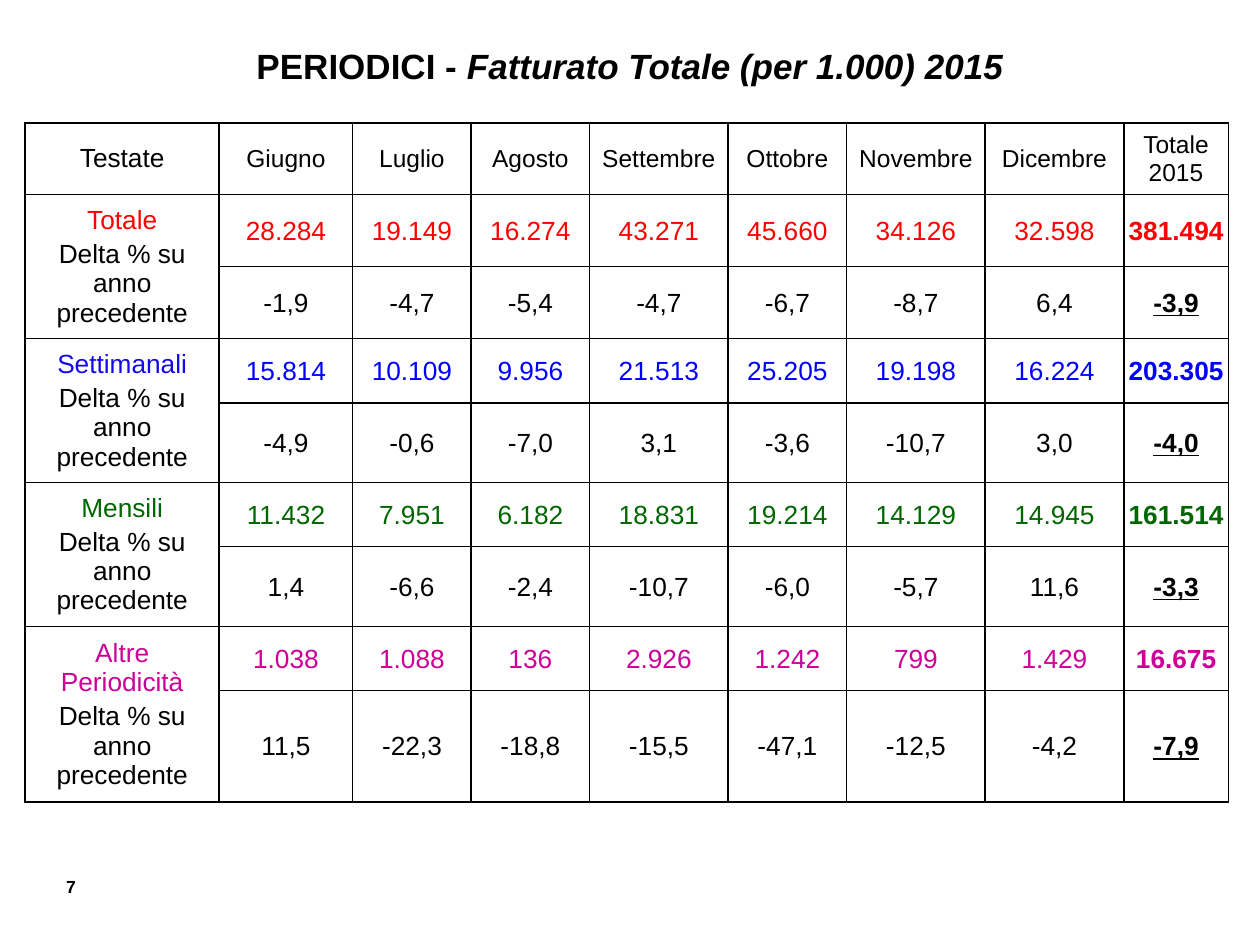
from lxml import etree
from pptx import Presentation, util as u
from pptx.dml.color import RGBColor
from pptx.enum import text
from pptx.oxml.ns import qn

BLACK = "000000"
MONTHS = ["Giugno", "Luglio", "Agosto", "Settembre", "Ottobre", "Novembre", "Dicembre"]
DELTA = "Delta % su anno precedente"
# label, label colour, figure colour, revenue, change on the previous year
GROUPS = [
    ("Totale", "FF0000", "FF0000",
     "28.284 19.149 16.274 43.271 45.660 34.126 32.598 381.494",
     "-1,9 -4,7 -5,4 -4,7 -6,7 -8,7 6,4 -3,9"),
    ("Settimanali", "1409ED", "0000FF",
     "15.814 10.109 9.956 21.513 25.205 19.198 16.224 203.305",
     "-4,9 -0,6 -7,0 3,1 -3,6 -10,7 3,0 -4,0"),
    ("Mensili", "006600", "006600",
     "11.432 7.951 6.182 18.831 19.214 14.129 14.945 161.514",
     "1,4 -6,6 -2,4 -10,7 -6,0 -5,7 11,6 -3,3"),
    ("Altre Periodicità", "CC0099", "CC0099",
     "1.038 1.088 136 2.926 1.242 799 1.429 16.675",
     "11,5 -22,3 -18,8 -15,5 -47,1 -12,5 -4,2 -7,9"),
]
COLUMNS = [1.54, 1.06, 0.94, 0.94, 1.1, 0.94, 1.1, 1.1, 0.83]
ROWS = [0.57, 0.57, 0.57, 0.51, 0.63, 0.51, 0.63, 0.51, 0.88]
FIGURE_INSETS = (0.01, 0.01, 0.01, 0)
HEADER_INSETS = (0.05,) * 4
LABEL_INSETS = (0.1, 0.05, 0.1, 0.05)


def colour(hex_string):
    return RGBColor.from_string(hex_string)


class Page:
    """Holds the style and the current slide; places are shares of the slide."""
    font = "Arial"
    line_width = 1

    def __init__(self, deck):
        self.width, self.height = deck.slide_width, deck.slide_height
        self.slide = deck.slides.add_slide(deck.slide_layouts[6])

    def box(self, left, top, width, height):
        return (round(left * self.width), round(top * self.height),
                round(width * self.width), round(height * self.height))

    def fill_paragraph(self, paragraph, runs, align=text.PP_ALIGN.CENTER, before=0):
        paragraph.alignment = align
        if before:
            paragraph.space_before = u.Pt(before)
        for wording, look in runs:
            run = paragraph.add_run()
            run.text = wording
            style = {"name": self.font, "size": u.Pt(look.get("size", 15)),
                     "bold": look.get("bold", False), "italic": look.get("italic", False),
                     "underline": look.get("underline", False)}
            for key, value in style.items():
                setattr(run.font, key, value)
            run.font.color.rgb = colour(look.get("colour", BLACK))

    def text(self, place, runs, align=text.PP_ALIGN.CENTER):
        frame = self.slide.shapes.add_textbox(*self.box(*place)).text_frame
        frame.word_wrap = True
        self.fill_paragraph(frame.paragraphs[0], runs, align)

    def table(self, left, top, columns, rows):
        place = self.box(left, top, u.Inches(sum(columns)) / self.width,
                         u.Inches(sum(rows)) / self.height)
        table = self.slide.shapes.add_table(len(rows), len(columns), *place).table
        table.first_row = table.horz_banding = False
        for column, width in zip(table.columns, columns):
            column.width = u.Inches(width)
        for row, height in zip(table.rows, rows):
            row.height = u.Inches(height)
            for cell in row.cells:
                cell.fill.background()
                self.borders(cell)
        return table

    def borders(self, cell):
        properties = cell._tc.get_or_add_tcPr()
        for place, side in enumerate(("a:lnL", "a:lnR", "a:lnT", "a:lnB")):
            line = etree.Element(qn(side), w=str(u.Pt(self.line_width)))
            fill = etree.SubElement(line, qn("a:solidFill"))
            etree.SubElement(fill, qn("a:srgbClr"), val=BLACK)
            properties.insert(place, line)

    def cell(self, cell, lines, insets, gap=0):
        cell.vertical_anchor = text.MSO_ANCHOR.MIDDLE
        for side, inset in zip(("left", "top", "right", "bottom"), insets):
            setattr(cell, f"margin_{side}", u.Inches(inset))
        frame = cell.text_frame
        for number, line in enumerate(lines):
            paragraph = frame.add_paragraph() if number else frame.paragraphs[0]
            self.fill_paragraph(paragraph, [line], before=gap if number else 0)


def main():
    deck = Presentation()
    deck.slide_width, deck.slide_height = u.Inches(10), u.Inches(7.5)
    page = Page(deck)

    # Page number
    page.text((0.02, 0.92, 0.05, 0.04), [("7", {"size": 10, "bold": True})],
              text.PP_ALIGN.RIGHT)

    # Header row
    table = page.table(0.02, 0.13, COLUMNS, ROWS)
    page.cell(table.cell(0, 0), [("Testate", {})], HEADER_INSETS)
    headings = [[month] for month in MONTHS] + [["Totale", "2015"]]
    for column, heading in enumerate(headings, 1):
        page.cell(table.cell(0, column), [(line, {"size": 14}) for line in heading],
                  HEADER_INSETS)

    # Two rows for each group: revenue and change
    for group, (label, label_colour, figure_colour, revenue, change) in enumerate(GROUPS):
        top = 1 + 2 * group
        table.cell(top, 0).merge(table.cell(top + 1, 0))
        page.cell(table.cell(top, 0), [(label, {"colour": label_colour}), (DELTA, {})],
                  LABEL_INSETS, gap=3)
        for row, figures, tint in ((top, revenue, figure_colour), (top + 1, change, BLACK)):
            for column, figure in enumerate(figures.split(), 1):
                total = column == len(headings)
                look = {"colour": tint, "bold": total, "underline": total and row > top}
                page.cell(table.cell(row, column), [(figure, look)], FIGURE_INSETS)

    # Title
    page.text((0, 0.04, 1, 0.06),
              [("PERIODICI - ", {"size": 20, "bold": True}),
               ("Fatturato Totale (per 1.000) 2015",
                {"size": 20, "bold": True, "italic": True})])

    deck.save("out.pptx")


if __name__ == "__main__":
    main()
